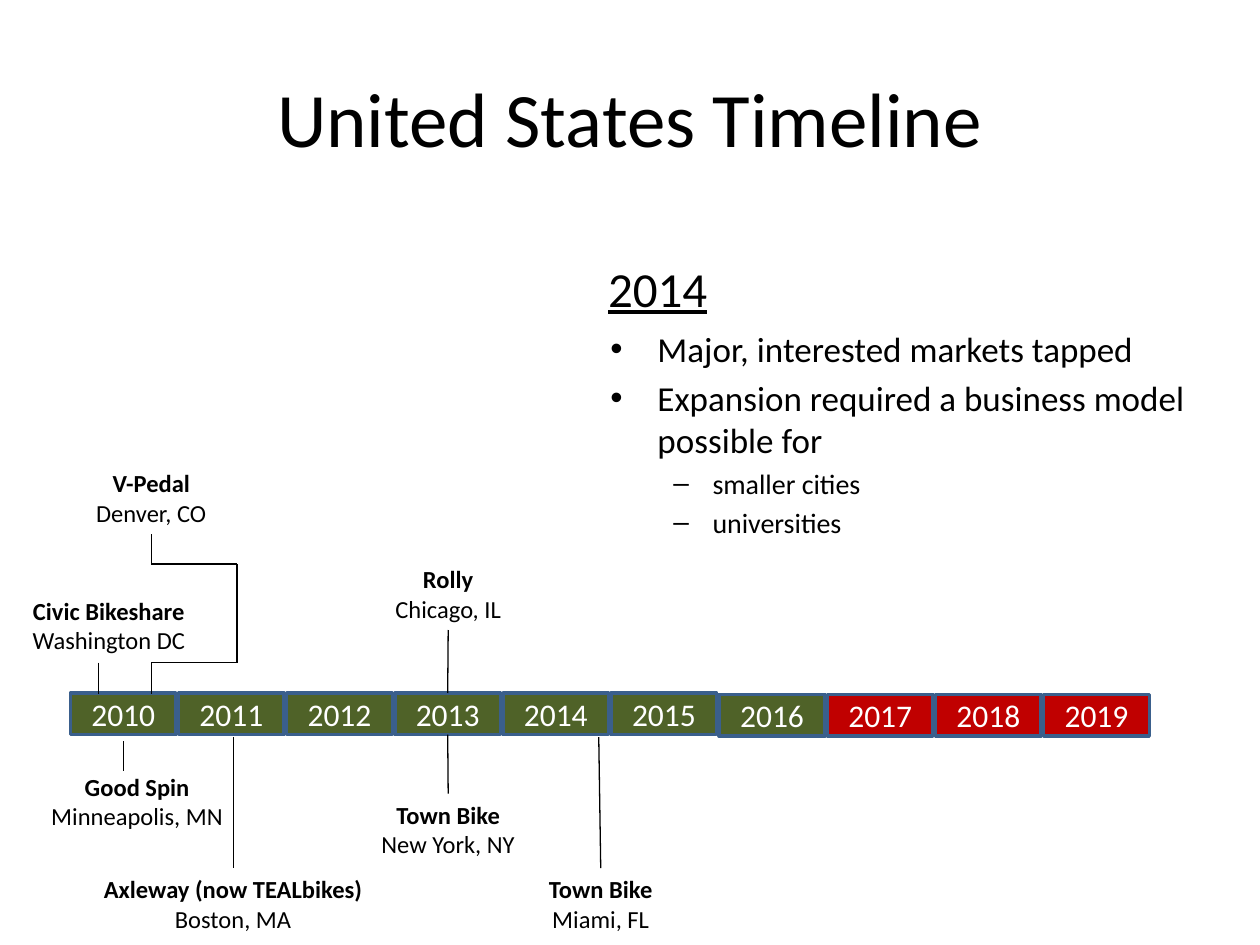
from itertools import pairwise

from lxml import etree
from pptx import Presentation
from pptx.dml.color import RGBColor
from pptx.enum.shapes import MSO_CONNECTOR, MSO_SHAPE
from pptx.enum.text import MSO_ANCHOR, MSO_AUTO_SIZE, PP_ALIGN
from pptx.oxml.ns import qn
from pptx.util import Cm, Pt

BLACK = RGBColor(0x00, 0x00, 0x00)
WHITE = RGBColor(0xFF, 0xFF, 0xFF)
GREEN = RGBColor(0x4F, 0x62, 0x28)
RED = RGBColor(0xC0, 0x00, 0x00)
BLUE = RGBColor(0x3A, 0x5F, 0x8C)

RECT = MSO_SHAPE.RECTANGLE
LINE = MSO_CONNECTOR.STRAIGHT
LEFT, CENTER = PP_ALIGN.LEFT, PP_ALIGN.CENTER
MIDDLE = MSO_ANCHOR.MIDDLE
FIT, FIXED = MSO_AUTO_SIZE.SHAPE_TO_FIT_TEXT, MSO_AUTO_SIZE.NONE
TOP, BOTTOM = 0, 2


class Board:
    """Style and current slide."""

    font = "Calibri"

    def __init__(self, slide):
        self.slide = slide
        self.shapes = slide.shapes

    def run(self, para, text, size, color=BLACK, bold=False, under=False):
        run = para.add_run()
        run.text = text
        font = run.font
        font.name, font.size = self.font, Pt(size)
        font.bold, font.underline = bold, under
        font.color.rgb = color

    def place(self, shape, x, y, w, h):
        shape.left, shape.top = Cm(x), Cm(y)
        shape.width, shape.height = Cm(w), Cm(h)

    def title(self, text):
        shape = self.shapes.title
        self.place(shape, 1.27, 0.76, 22.86, 3.18)
        shape.text_frame.vertical_anchor = MIDDLE
        para = shape.text_frame.paragraphs[0]
        para.alignment = CENTER
        self.run(para, text, 44)

    def body(self, items, x, y, w, h):
        shape = self.slide.placeholders[1]
        self.place(shape, x, y, w, h)
        frame = shape.text_frame
        frame.auto_size = FIXED
        for i, (level, text) in enumerate(items):
            para = frame.add_paragraph() if i else frame.paragraphs[0]
            para.level = level
            margin, hang, size = ((0.95, 0.95, 20), (2.06, 0.79, 16))[level]
            props = para._p.get_or_add_pPr()
            props.set("marL", str(Cm(margin)))
            props.set("indent", str(-Cm(hang)))
            if not i:
                para.space_before = Pt(0)
            self.run(para, text, size)

    def text(self, lines, x, y, w, align=CENTER, size=14, fill=None):
        """Each line is a text and its run style."""
        shape = self.shapes.add_textbox(Cm(x), Cm(y), Cm(w), Cm(1.45))
        if fill is not None:
            shape.fill.solid()
            shape.fill.fore_color.rgb = fill
        frame = shape.text_frame
        frame.word_wrap = False
        frame.auto_size = FIT
        for i, (text, style) in enumerate(lines):
            para = frame.add_paragraph() if i else frame.paragraphs[0]
            para.alignment = align
            self.run(para, text, size, **style)
        return shape

    def label(self, name, city, x, y, w, fill=None):
        return self.text([(name, {"bold": True}), (city, {})], x, y, w, fill=fill)

    def box(self, text, x, y, w, h, fill):
        shape = self.shapes.add_shape(RECT, Cm(x), Cm(y), Cm(w), Cm(h))
        shape.shadow.inherit = False
        shape.fill.solid()
        shape.fill.fore_color.rgb = fill
        shape.line.color.rgb, shape.line.width = BLUE, Pt(2)
        shape.text_frame.vertical_anchor = MIDDLE
        para = shape.text_frame.paragraphs[0]
        para.alignment = CENTER
        self.run(para, text, 18, WHITE)
        return shape

    def line(self, start, end, head=None, tail=None):
        """Head and tail are shapes whose bottom and top are joined."""
        link = self.shapes.add_connector(LINE, *map(Cm, start + end))
        link.line.color.rgb, link.line.width = BLACK, Pt(0.75)
        etree.SubElement(link._element.spPr, qn("a:effectLst"))
        if head is not None:
            link.begin_connect(head, BOTTOM)
        if tail is not None:
            link.end_connect(tail, TOP)


def main():
    deck = Presentation()
    deck.slide_width, deck.slide_height = Cm(25.4), Cm(19.05)
    board = Board(deck.slides.add_slide(deck.slide_layouts[1]))

    # Title and notes on 2014
    board.title("United States Timeline")
    board.text([("2014", {"under": True})], 12.01, 5.08, 2.54, LEFT, 28)
    board.body([
        (0, "Major, interested markets tapped"),
        (0, "Expansion required a business model possible for"),
        (1, "smaller cities"),
        (1, "universities"),
    ], 12.05, 6.48, 12.9, 12.57)

    # Row of years
    years = {}
    for i, year in enumerate(range(2010, 2020)):
        fill = GREEN if year < 2017 else RED
        top = 13.97 if year < 2016 else 14
        years[year] = board.box(str(year), 1.42 + 2.18 * i, top, 2.13, 0.84, fill)

    # Labels above the row
    board.label("Civic Bikeshare", "Washington DC", 0.15, 11.89, 4.09)
    denver = board.label("V-Pedal", "Denver, CO", 1.68, 9.32, 2.74)
    chicago = board.label("Rolly", "Chicago, IL", 7.7, 11.25, 2.67)

    # Labels below the row
    board.label("Good Spin", "Minneapolis, MN", 0.76, 15.44, 4.01)
    boston = board.label("Axleway (now TEALbikes)", "Boston, MA",
                         1.78, 17.5, 5.84, WHITE)
    york = board.label("Town Bike", "New York, NY", 7.42, 16, 3.23)
    miami = board.label("Town Bike", "Miami, FL", 10.51, 17.5, 3.2)

    # Straight leaders
    board.line((1.98, 13.36), (1.98, 14))
    board.line((2.49, 14.94), (2.49, 15.54))
    board.line((4.7, 14.86), (4.7, 17.5), tail=boston)
    board.line((9.04, 12.7), (9.04, 13.97), chicago, years[2013])
    board.line((9.04, 14.81), (9.04, 16), years[2013], york)
    board.line((12.07, 14.86), (12.11, 17.5), tail=miami)

    # Leader from Denver around the Washington label
    near, far = 3.05, 4.78
    bends = [(near, 10.77), (near, 11.37), (far, 11.37),
             (far, 13.36), (near, 13.36), (near, 14)]
    for i, (start, end) in enumerate(pairwise(bends)):
        board.line(start, end, head=None if i else denver)

    deck.save("out.pptx")


if __name__ == "__main__":
    main()
